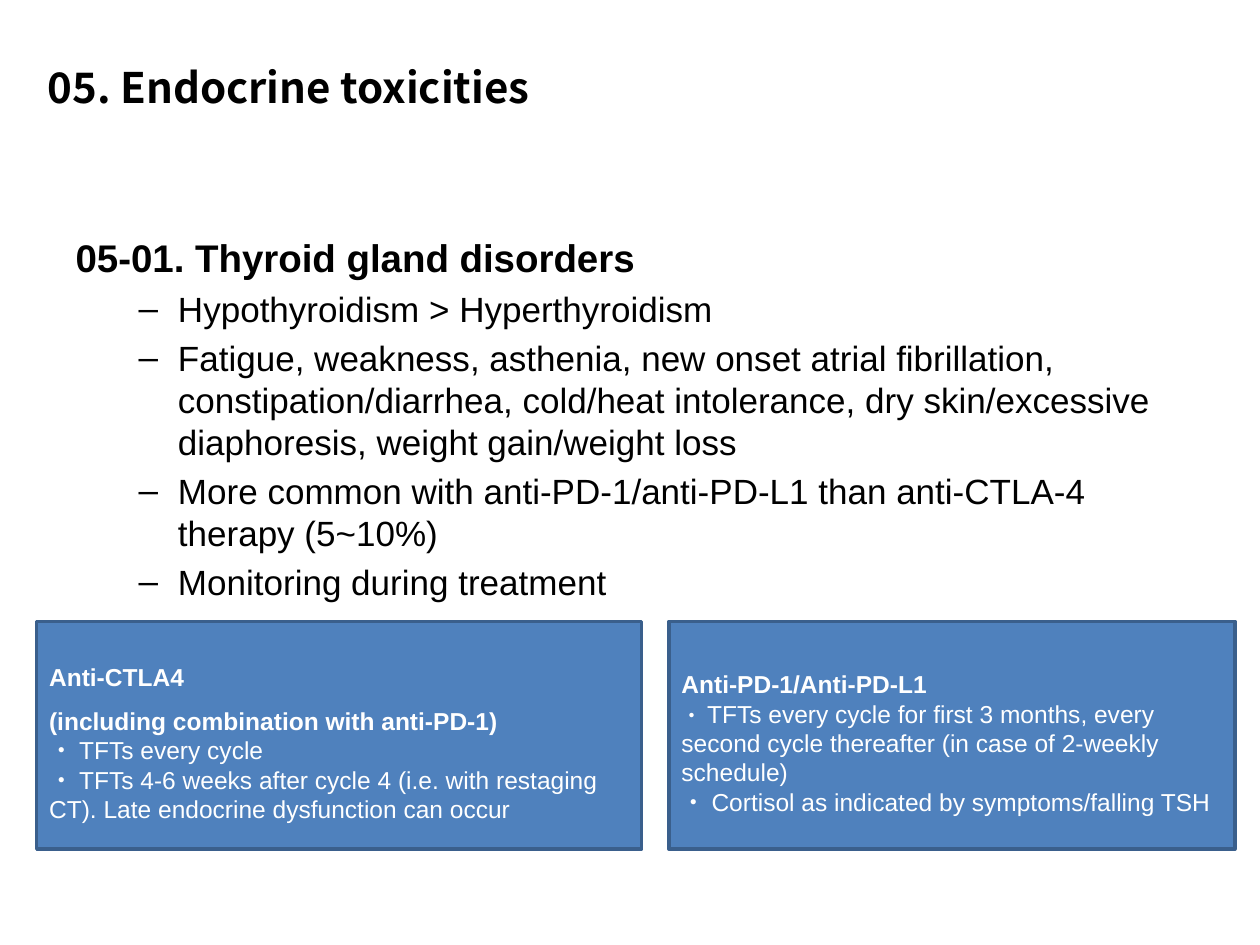
from dataclasses import dataclass

from lxml import etree
from pptx import Presentation
from pptx.dml.color import RGBColor
from pptx.enum.shapes import MSO_SHAPE
from pptx.enum.text import MSO_ANCHOR, MSO_AUTO_SIZE, PP_ALIGN
from pptx.oxml.ns import qn
from pptx.util import Pt

RECTANGLE = MSO_SHAPE.RECTANGLE
MIDDLE = MSO_ANCHOR.MIDDLE
NO_AUTOFIT = MSO_AUTO_SIZE.NONE
LEFT = PP_ALIGN.LEFT


@dataclass(frozen=True)
class Theme:
    title_font: str = "Noto Sans CJK KR"
    text_font: str = "Arial"
    black: RGBColor = RGBColor(0x00, 0x00, 0x00)
    white: RGBColor = RGBColor(0xFF, 0xFF, 0xFF)
    card_fill: RGBColor = RGBColor(0x4F, 0x81, 0xBD)
    card_line: RGBColor = RGBColor(0x3A, 0x5F, 0x8C)
    title_size: float = 24
    heading_size: float = 22
    list_size: float = 20
    card_size: float = 14
    small_bullet_size: float = 12


@dataclass(frozen=True)
class CardItem:
    text: str
    bullet_size: float


@dataclass(frozen=True)
class Card:
    left: float
    width: float
    headings: tuple[str, ...]
    items: tuple[CardItem, ...]


THEME = Theme()
CARD_TOP, CARD_HEIGHT = 355, 130.3
CARD_BULLET = "・ "

TITLE = "05. Endocrine toxicities"
HEADING = "05-01. Thyroid gland disorders"
POINTS = (
    "Hypothyroidism > Hyperthyroidism",
    "Fatigue, weakness, asthenia, new onset atrial fibrillation, "
    "constipation/diarrhea, cold/heat intolerance, dry skin/excessive "
    "diaphoresis, weight gain/weight loss",
    "More common with anti-PD-1/anti-PD-L1 than anti-CTLA-4 therapy (5~10%)",
    "Monitoring during treatment",
)
CARDS = (
    Card(21, 345.6, ("Anti-CTLA4", "(including combination with anti-PD-1)"), (
        CardItem("TFTs every cycle", THEME.card_size),
        CardItem("TFTs 4-6 weeks after cycle 4 (i.e. with restaging CT). "
                 "Late endocrine dysfunction can occur", THEME.card_size),
    )),
    Card(382.3, 323.3, ("Anti-PD-1/Anti-PD-L1",), (
        CardItem("TFTs every cycle for first 3 months, every second cycle "
                 "thereafter (in case of 2-weekly schedule)", THEME.small_bullet_size),
        CardItem("Cortisol as indicated by symptoms/falling TSH", THEME.card_size),
    )),
)


def place(shape, left: float, top: float, width: float, height: float) -> None:
    shape.left, shape.top = Pt(left), Pt(top)
    shape.width, shape.height = Pt(width), Pt(height)


def set_font(paragraph, name: str, size: float, color: RGBColor, bold: bool) -> None:
    font = paragraph.font
    font.name, font.size, font.bold = name, Pt(size), bold
    font.color.rgb = color


def next_paragraph(frame, is_first: bool):
    return frame.paragraphs[0] if is_first else frame.add_paragraph()


def fill_title(shape) -> None:
    place(shape, 20, 4.5, 648, 90)
    frame = shape.text_frame
    frame.auto_size = NO_AUTOFIT
    frame.vertical_anchor = MIDDLE
    paragraph = frame.paragraphs[0]
    paragraph.text = TITLE
    paragraph.alignment = LEFT
    set_font(paragraph, THEME.title_font, THEME.title_size, THEME.black, True)


def fill_body(shape) -> None:
    """Write an unbulleted heading, then points with the template's dash bullets."""
    place(shape, 36, 126, 648, 356.4)
    frame = shape.text_frame
    frame.auto_size = NO_AUTOFIT
    frame.margin_top = Pt(8)
    heading = frame.paragraphs[0]
    heading.text = HEADING
    heading.space_before = Pt(0)
    properties = heading._p.get_or_add_pPr()
    properties.set("marL", "0")
    properties.set("indent", "0")
    etree.SubElement(properties, qn("a:buNone"))
    set_font(heading, THEME.text_font, THEME.heading_size, THEME.black, True)
    for point in POINTS:
        paragraph = frame.add_paragraph()
        paragraph.text = point
        paragraph.level = 1
        set_font(paragraph, THEME.text_font, THEME.list_size, THEME.black, False)


def add_card(slide, card: Card) -> None:
    shape = slide.shapes.add_shape(
        RECTANGLE, Pt(card.left), Pt(CARD_TOP), Pt(card.width), Pt(CARD_HEIGHT))
    shape.shadow.inherit = False
    shape.fill.solid()
    shape.fill.fore_color.rgb = THEME.card_fill
    shape.line.color.rgb = THEME.card_line
    shape.line.width = Pt(2)
    frame = shape.text_frame
    frame.word_wrap = True
    frame.vertical_anchor = MIDDLE
    for index, heading in enumerate(card.headings):
        paragraph = next_paragraph(frame, index == 0)
        paragraph.text = heading
        paragraph.alignment = LEFT
        paragraph.line_spacing = 1.5
        set_font(paragraph, THEME.text_font, THEME.card_size, THEME.white, True)
    for item in card.items:
        paragraph = frame.add_paragraph()
        paragraph.alignment = LEFT
        set_font(paragraph, THEME.text_font, THEME.card_size, THEME.white, False)
        if item.bullet_size == THEME.card_size:
            paragraph.text = CARD_BULLET + item.text
        else:
            bullet = paragraph.add_run()
            bullet.text = CARD_BULLET
            bullet.font.size = Pt(item.bullet_size)
            paragraph.add_run().text = item.text


def main() -> None:
    presentation = Presentation()
    presentation.slide_width, presentation.slide_height = Pt(720), Pt(540)
    slide = presentation.slides.add_slide(presentation.slide_layouts[1])
    fill_title(slide.shapes.title)
    fill_body(slide.placeholders[1])
    for card in CARDS:
        add_card(slide, card)
    presentation.save("out.pptx")


if __name__ == "__main__":
    main()
